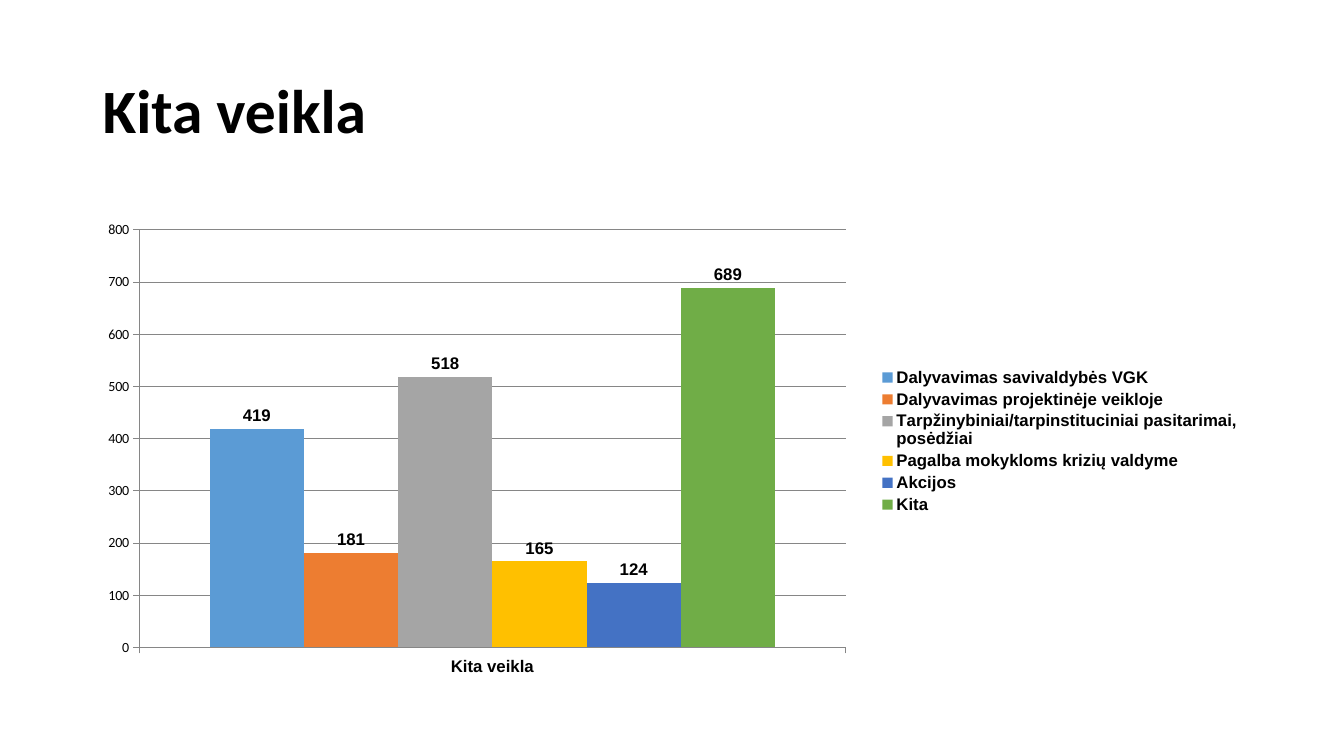
from lxml.etree import SubElement
from pptx import Presentation
from pptx.chart.data import CategoryChartData
from pptx.dml.color import RGBColor
from pptx.enum.chart import XL_CHART_TYPE, XL_LABEL_POSITION, XL_LEGEND_POSITION, XL_TICK_MARK
from pptx.enum.text import MSO_ANCHOR
from pptx.oxml.ns import qn
from pptx.util import Inches, Pt

WIDTH, HEIGHT = Inches(13.33), Inches(7.5)
COLORS = {
    "text": "000000",
    "grid": "868686",
    "blue": "5B9BD5",
    "orange": "ED7D31",
    "grey": "A5A5A5",
    "yellow": "FFC000",
    "navy": "4472C4",
    "green": "70AD47",
}
ACTIVITIES = [
    ("Dalyvavimas savivaldybės VGK", 419, "blue"),
    ("Dalyvavimas projektinėje veikloje", 181, "orange"),
    ("Tarpžinybiniai/tarpinstituciniai pasitarimai, posėdžiai", 518, "grey"),
    ("Pagalba mokykloms krizių valdyme", 165, "yellow"),
    ("Akcijos", 124, "navy"),
    ("Kita", 689, "green"),
]
PLOT_SHARES = {"x": 0.04, "y": 0.06, "w": 0.61, "h": 0.87}


def color(name):
    return RGBColor.from_string(COLORS[name])


def style_font(font, name, size, bold):
    font.name, font.size, font.bold = name, Pt(size), bold
    font.color.rgb = color("text")


def add_heading(slide, left, top, width, height):
    heading = slide.shapes.add_textbox(left, top, width, height).text_frame
    heading.word_wrap = True
    heading.vertical_anchor = MSO_ANCHOR.MIDDLE
    heading.text = "Kita veikla"
    line = heading.paragraphs[0]
    line.line_spacing = 0.9
    style_font(line.runs[0].font, "Calibri", 44, True)


def place_plot(chart):
    plot_area = chart.element.find(f".//{qn('c:plotArea')}")
    for automatic in plot_area.findall(qn("c:layout")):
        plot_area.remove(automatic)
    layout = SubElement(plot_area, qn("c:layout"))
    plot_area.insert(0, layout)
    manual = SubElement(layout, qn("c:manualLayout"))
    settings = {"layoutTarget": "inner", "xMode": "edge", "yMode": "edge", **PLOT_SHARES}
    for tag, value in settings.items():
        SubElement(manual, qn(f"c:{tag}")).set("val", str(value))


def style_axes(chart):
    for axis in (chart.category_axis, chart.value_axis):
        axis.major_tick_mark = XL_TICK_MARK.OUTSIDE
        axis.minor_tick_mark = XL_TICK_MARK.NONE
        axis.format.line.color.rgb = color("grid")
        axis.format.line.width = Pt(0.75)
    style_font(chart.category_axis.tick_labels.font, "Arial", 12, True)
    scale = chart.value_axis
    scale.minimum_scale, scale.maximum_scale, scale.major_unit = 0, 800, 100
    scale.has_major_gridlines = True
    scale.major_gridlines.format.line.color.rgb = color("grid")
    scale.major_gridlines.format.line.width = Pt(0.75)


def add_activity_chart(slide, left, top, width, height):
    activity_data = CategoryChartData()
    activity_data.categories = ["Kita veikla"]
    for name, count, _ in ACTIVITIES:
        activity_data.add_series(name, [count])
    chart = slide.shapes.add_chart(
        XL_CHART_TYPE.COLUMN_CLUSTERED, left, top, width, height, activity_data
    ).chart
    chart.has_title = False
    style_font(chart.font, "Calibri", 10, False)
    style_axes(chart)
    place_plot(chart)

    columns = chart.plots[0]
    columns.gap_width, columns.overlap = 150, 0
    columns.vary_by_categories = False
    for activity, (_, _, tone) in zip(columns.series, ACTIVITIES):
        activity.format.fill.solid()
        activity.format.fill.fore_color.rgb = color(tone)
        labels = activity.data_labels
        labels.show_value = True
        labels.position = XL_LABEL_POSITION.OUTSIDE_END
        style_font(labels.font, "Arial", 12, True)

    chart.has_legend = True
    chart.legend.position = XL_LEGEND_POSITION.RIGHT
    chart.legend.include_in_layout = False
    style_font(chart.legend.font, "Arial", 12, True)


def main():
    deck = Presentation()
    deck.slide_width, deck.slide_height = WIDTH, HEIGHT
    slide = deck.slides.add_slide(deck.slide_layouts[6])
    margin = int(WIDTH * 0.069)
    content_width = WIDTH - 2 * margin
    add_heading(slide, margin, int(HEIGHT * 0.053), content_width, int(HEIGHT * 0.193))
    add_activity_chart(slide, margin, int(HEIGHT * 0.266), content_width, int(HEIGHT * 0.635))
    deck.save("out.pptx")


if __name__ == "__main__":
    main()
